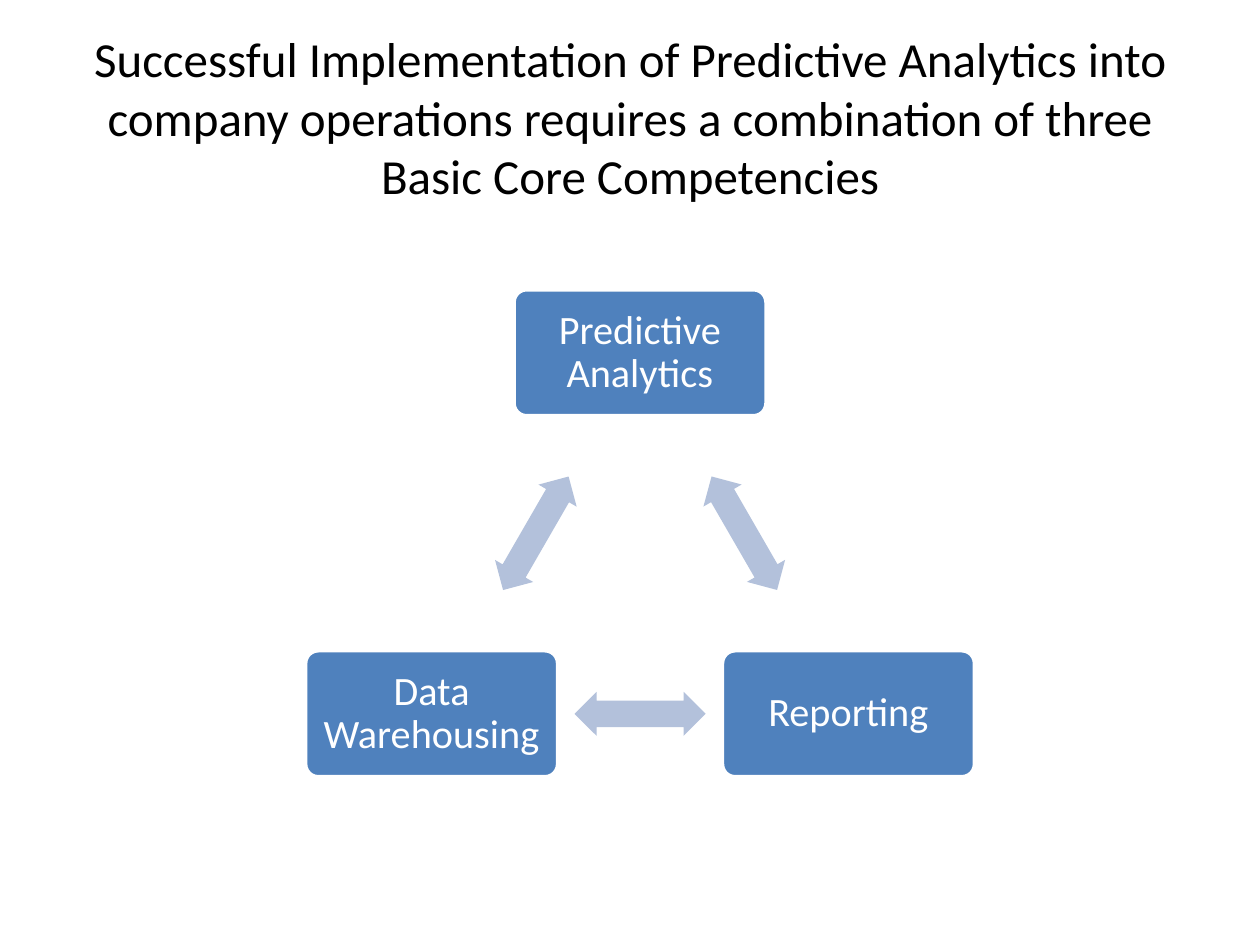
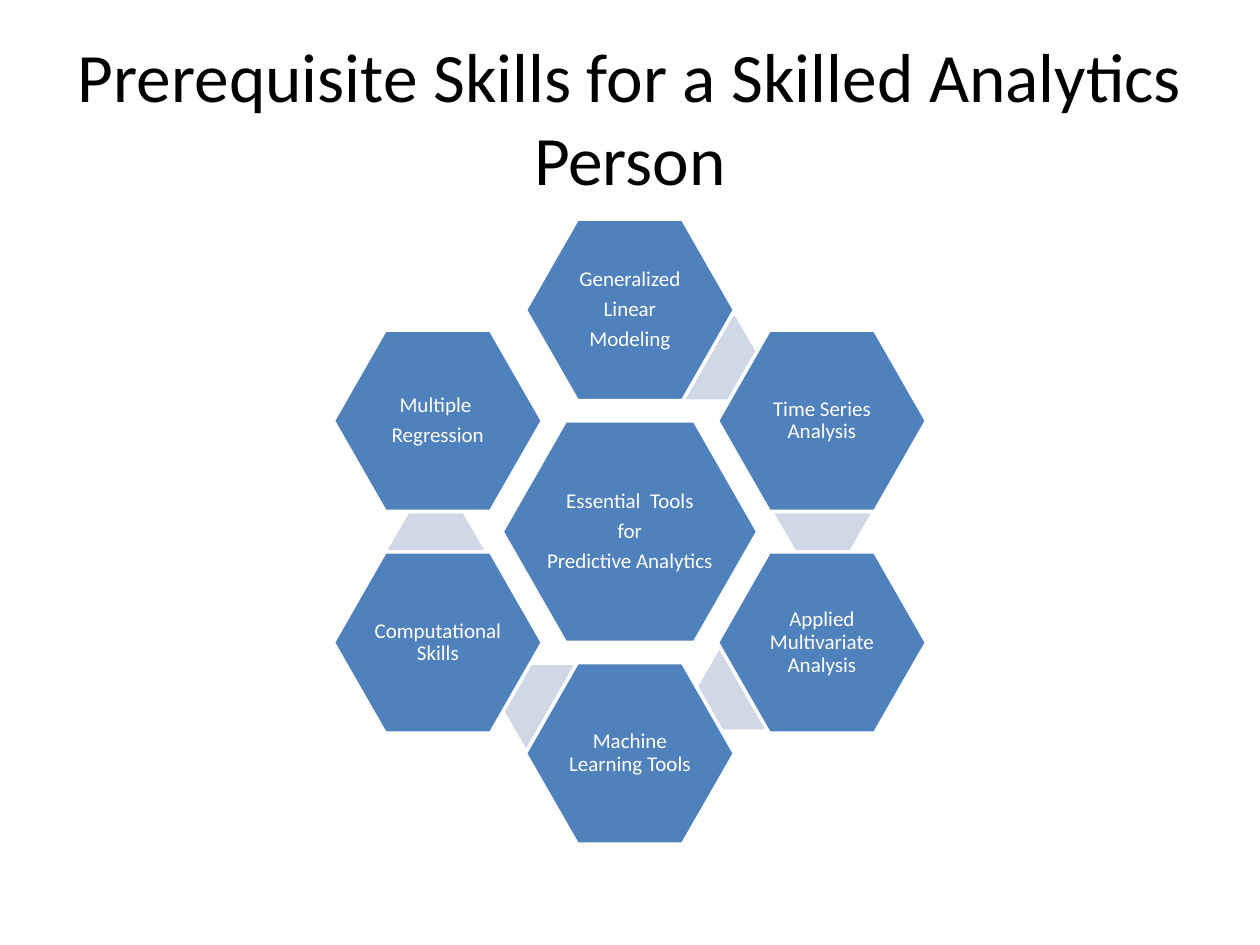
import math

from pptx import Presentation, util as u
from pptx.dml.color import RGBColor
from pptx.enum import shapes, text

PX = 9144
FONT = "Calibri"
COLORS = {
    "text": "000000",
    "light": "FFFFFF",
    "node": "4F81BD",
    "arrow": "B3C1DB",
    "accent": "D0D8E8",
}
SHAPE = shapes.MSO_SHAPE


def px(n):
    return u.Emu(round(n * PX))


def rgb(name):
    return RGBColor.from_string(COLORS[name])


def polar(center, radius, degrees):
    a = math.radians(degrees)
    return center[0] + radius * math.cos(a), center[1] + radius * math.sin(a)


def write(tf, content, size, color="light", margin=None, spacing=None, after=None):
    tf.word_wrap = True
    tf.auto_size = text.MSO_AUTO_SIZE.NONE
    tf.vertical_anchor = text.MSO_ANCHOR.MIDDLE
    if margin is not None:
        tf.margin_left = tf.margin_right = px(margin)
        tf.margin_top = tf.margin_bottom = px(margin)
    for i, line in enumerate(content.split("\n")):
        p = tf.add_paragraph() if i else tf.paragraphs[0]
        p.alignment = text.PP_ALIGN.CENTER
        p.line_spacing = spacing
        p.space_after = after
        r = p.add_run()
        r.text = line
        r.font.name = FONT
        r.font.size = u.Pt(size)
        r.font.color.rgb = rgb(color)


class Deck:
    def __init__(self):
        self.prs = Presentation()
        self.prs.slide_width, self.prs.slide_height = px(1000), px(750)
        self.s = None

    def slide(self, title, size):
        self.s = self.prs.slides.add_slide(self.prs.slide_layouts[5])
        sp = self.s.shapes.title
        sp.left, sp.top, sp.width, sp.height = px(50), px(30), px(900), px(125)
        write(sp.text_frame, title, size, color="text")

    def shape(self, kind, center, size, fill, adj, rotation=0):
        (x, y), (w, h) = center, size
        sp = self.s.shapes.add_shape(kind, px(x - w / 2), px(y - h / 2), px(w), px(h))
        sp.shadow.inherit = False
        sp.fill.solid()
        sp.fill.fore_color.rgb = rgb(fill)
        sp.line.fill.background()
        sp.rotation = rotation
        for i, value in enumerate(adj):
            sp.adjustments[i] = value
        return sp

    def node(self, kind, center, size, adj, label, font_size, margin):
        sp = self.shape(kind, center, size, "node", adj)
        sp.line.color.rgb = rgb("light")
        sp.line.width = u.Pt(2)
        write(sp.text_frame, label, font_size, margin=margin, spacing=0.9,
              after=u.Pt(0.35 * font_size))

    def box(self, center, label):
        self.node(SHAPE.ROUNDED_RECTANGLE, center, (200, 100), [0.1], label, 23, 10)

    def arrow(self, center, rotation):
        self.shape(SHAPE.LEFT_RIGHT_ARROW, center, (104, 35), "arrow", [0.6, 0.5], rotation)

    def hexagon(self, center, size, label):
        self.node(SHAPE.HEXAGON, center, size, [0.286], label, 12, 2)

    def accent(self, center):
        self.shape(SHAPE.HEXAGON, center, (77, 66), "accent", [0.289])


def competencies(deck):
    deck.slide("Successful Implementation of Predictive Analytics into company operations "
               "requires a combination of three Basic Core Competencies", 28)
    center, radius = (508, 471), 191
    for i, label in enumerate(["Predictive Analytics", "Reporting", "Data Warehousing"]):
        angle = 120 * i - 90
        deck.box(polar(center, radius, angle), label)
        deck.arrow(polar(center, radius / 2, angle + 60), 60 + 120 * i)


def skills(deck):
    deck.slide("Prerequisite Skills for a Skilled Analytics Person", 39.6)
    center, radius = (500, 422), 176
    ring = [
        ("Generalized\nLinear\nModeling", (564, 284)),
        ("Time Series Analysis", (653, 407)),
        ("Applied Multivariate Analysis", (592, 546)),
        ("Machine Learning Tools", (437, 561)),
        ("Computational Skills", (346, 437)),
        ("Multiple \nRegression", None),
    ]
    deck.hexagon(center, (203, 176), "Essential  Tools\nfor\nPredictive Analytics")
    for i, (label, accent) in enumerate(ring):
        if accent:
            deck.accent(accent)
        deck.hexagon(polar(center, radius, 60 * i - 90), (166, 144), label)


def main():
    deck = Deck()
    competencies(deck)
    skills(deck)
    deck.prs.save("out.pptx")


if __name__ == "__main__":
    main()
